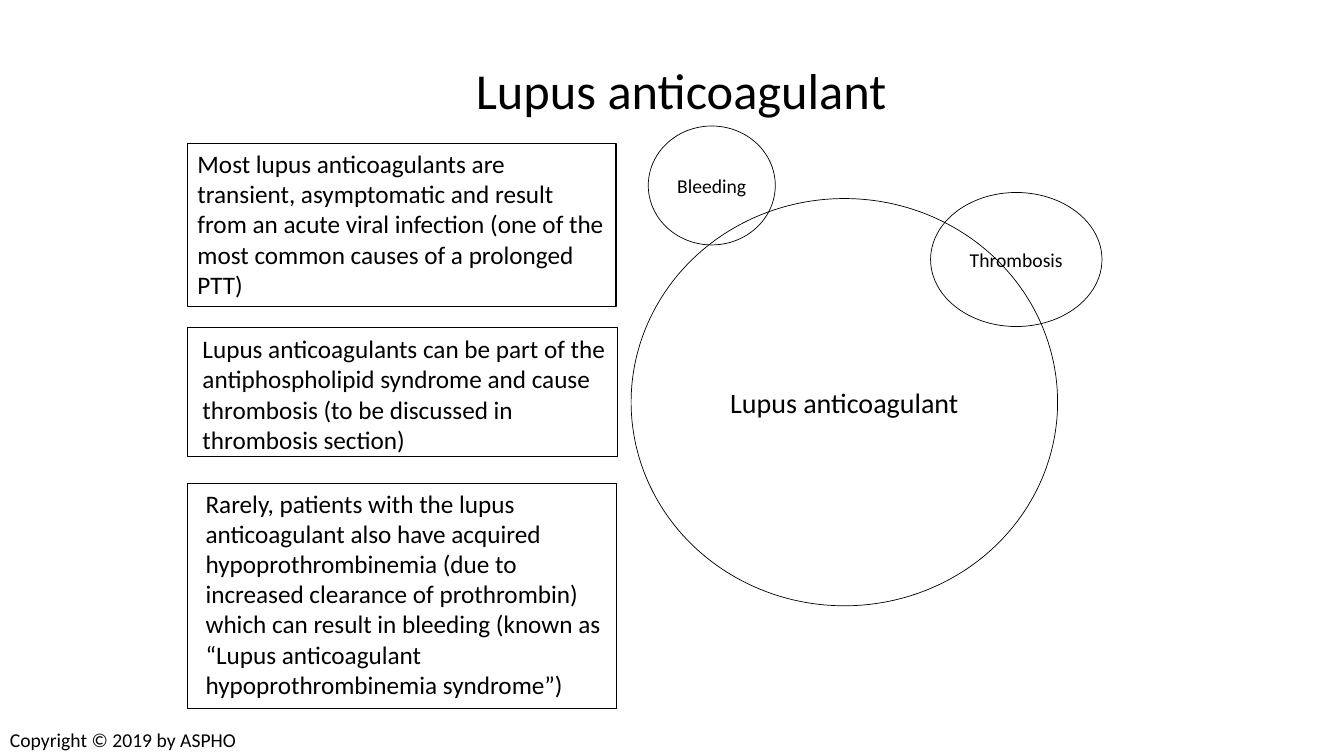
from pptx import Presentation
from pptx.dml.color import RGBColor
from pptx.enum.shapes import MSO_SHAPE as Shape
from pptx.enum.text import MSO_ANCHOR as Anchor, PP_ALIGN as Align
from pptx.util import Inches, Pt

BLACK = RGBColor(0, 0, 0)
FONT = "Calibri"

VIRAL = ("Most lupus anticoagulants are transient, asymptomatic and result "
         "from an acute viral infection (one of the most common causes of a "
         "prolonged PTT)")
CLOT = ("Lupus anticoagulants can be part of the antiphospholipid syndrome "
        "and cause thrombosis (to be discussed in thrombosis section)")
BLEED = ("Rarely, patients with the lupus anticoagulant also have acquired "
         "hypoprothrombinemia (due to increased clearance of prothrombin) "
         "which can result in bleeding (known as “Lupus anticoagulant "
         "hypoprothrombinemia syndrome”)")


def write(shape, text, size, align=Align.LEFT, anchor=Anchor.TOP, wrap=True):
    frame = shape.text_frame
    frame.word_wrap = wrap
    frame.vertical_anchor = anchor
    para = frame.paragraphs[0]
    para.alignment = align
    run = para.add_run()
    run.text = text
    run.font.name = FONT
    run.font.size = Pt(size)
    run.font.color.rgb = BLACK
    return para


def add_text(slide, box, text, size, **style):
    shape = slide.shapes.add_textbox(*map(Inches, box))
    return write(shape, text, size, **style)


def add_outline(slide, kind, box, width=0.5):
    """Add an unfilled shape with a thin black line."""
    shape = slide.shapes.add_shape(kind, *map(Inches, box))
    shape.shadow.inherit = False
    shape.fill.background()
    shape.line.color.rgb = BLACK
    shape.line.width = Pt(width)
    return shape


def add_circle(slide, box, text, size):
    shape = add_outline(slide, Shape.OVAL, box)
    write(shape, text, size, Align.CENTER, Anchor.MIDDLE, wrap=False)


def main():
    deck = Presentation()
    deck.slide_width, deck.slide_height = Inches(13.33), Inches(7.5)
    slide = deck.slides.add_slide(deck.slide_layouts[6])

    title = add_text(slide, (2.09, 0.48, 9.33, 0.88), "Lupus anticoagulant",
                     36, align=Align.CENTER, anchor=Anchor.MIDDLE)
    title.line_spacing = 0.9

    add_circle(slide, (9.23, 1.91, 1.7, 1.33), "Thrombosis", 14)
    add_circle(slide, (6.43, 1.25, 1.26, 1.18), "Bleeding", 14)
    add_circle(slide, (6.26, 1.97, 4.23, 4.04), "Lupus anticoagulant", 20)

    viral = add_outline(slide, Shape.RECTANGLE, (1.86, 1.42, 4.25, 1.62), 0.75)
    write(viral, VIRAL, 18)
    add_text(slide, (1.91, 3.26, 4.25, 1.31), CLOT, 18)
    add_text(slide, (1.94, 4.79, 4.25, 2.22), BLEED, 18)
    add_outline(slide, Shape.RECTANGLE, (1.86, 3.25, 4.26, 1.28))
    add_outline(slide, Shape.RECTANGLE, (1.86, 4.8, 4.25, 2.23))

    add_text(slide, (0, 7.17, 2.48, 0.34), "Copyright © 2019 by ASPHO", 14)
    deck.save("out.pptx")


if __name__ == "__main__":
    main()
